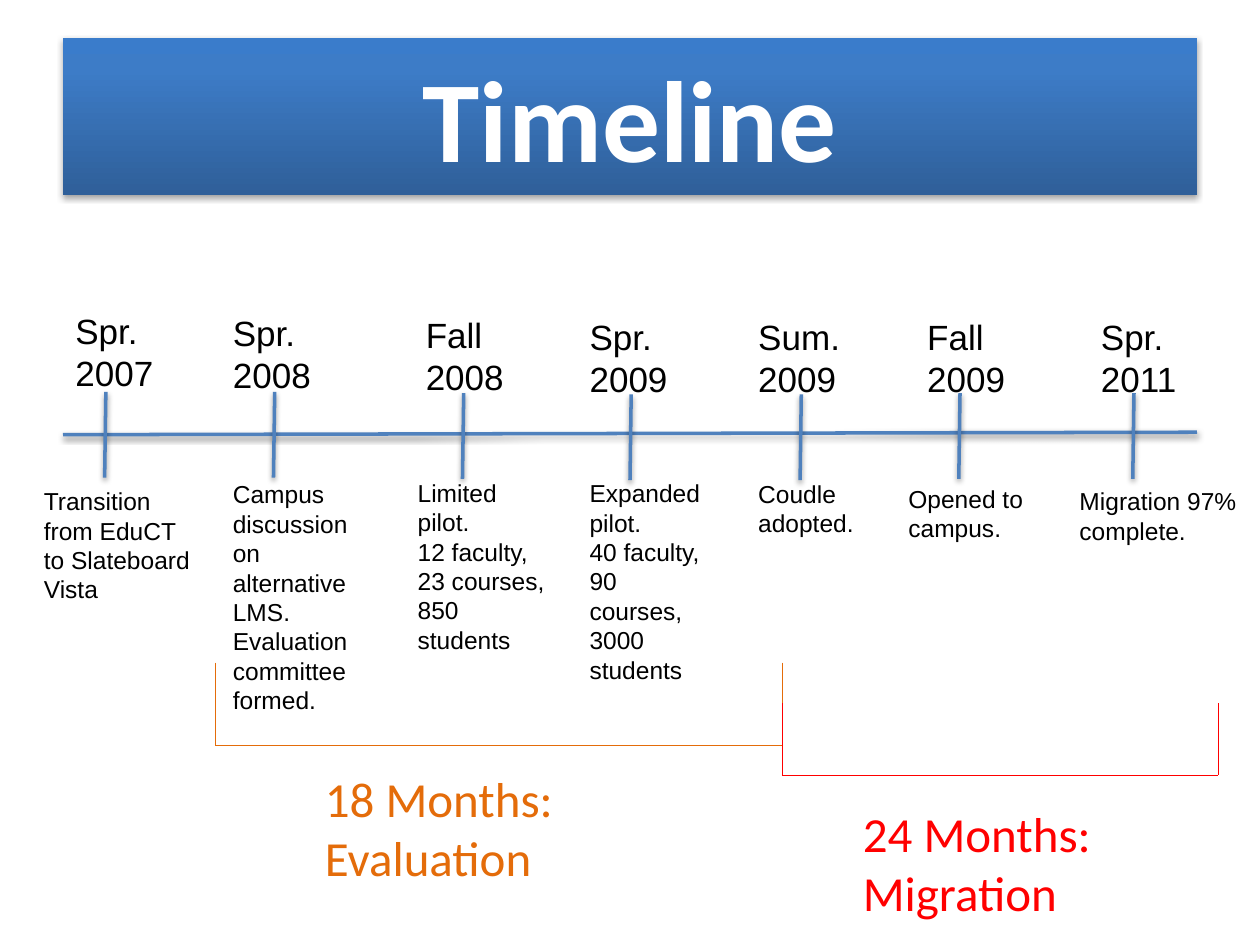
from dataclasses import dataclass

from lxml import etree
from pptx import Presentation
from pptx import util as u
from pptx.dml.color import RGBColor
from pptx.enum import shapes, text
from pptx.oxml import ns

Pt = u.Pt


@dataclass(frozen=True)
class Theme:
    black: str = "000000"
    white: str = "FFFFFF"
    axis: str = "4F81BD"
    evaluation: str = "E46C0A"
    migration: str = "FF0000"
    banner: tuple = ((0, "2F5F99"), (80, "3D7CC7"), (100, "3A7CCB"))
    heading_font: str = "Calibri"
    body_font: str = "Arial"
    title_size: int = 66
    phase_size: int = 28
    date_size: int = 20
    note_size: int = 14
    axis_width: float = 2
    bracket_width: float = 0.75


T = Theme()

# tick (x, top), date (left, top, width), date lines,
# note (left, top, width, height), note paragraphs
MILESTONES = [
    ((60.5, 223.9), (36, 173.5, 69.8), ("Spr.", "2007"),
     (18, 274.3, 105.1, 74.9), ("Transition from EduCT to Slateboard Vista",)),
    ((157, 223.9), (126, 174.7, 69.8), ("Spr.", "2008"),
     (126, 270.3, 91.4, 159.8),
     ("Campus discussion on alternative LMS. Evaluation committee formed.",)),
    ((265, 224.6), (236.2, 175.5, 85), ("Fall", "2008"),
     (231.6, 269.5, 90, 108.7),
     ("Limited pilot.", "12 faculty, 23 courses,", "850 students")),
    ((360.7, 225.4), (329.8, 176.6, 75.6), ("Spr.", "2009"),
     (329.8, 269.7, 83.5, 126),
     ("Expanded pilot.", "40 faculty,", "90 courses,", "3000 students")),
    ((457.9, 225.4), (426.2, 176.6, 75.6), ("Sum.", "2009"),
     (426.2, 270.1, 83.5, 41), ("Coudle adopted.",)),
    ((548.6, 224.6), (522.7, 176.6, 78.5), ("Fall", "2009"),
     (512, 272.9, 88.6, 41), ("Opened to campus.",)),
    ((648, 224.6), (622, 176.6, 68.4), ("Spr.", "2011"),
     (609.8, 274.3, 110.2, 41), ("Migration 97% complete.",)),
]


def rgb(value):
    return RGBColor.from_string(value)


def set_effects(sp, alpha=0, distance=0):
    """Replace inherited effects; a zero alpha means no shadow."""
    effects = etree.SubElement(sp._element.spPr, ns.qn("a:effectLst"))
    if alpha:
        shadow = etree.SubElement(
            effects, ns.qn("a:outerShdw"), blurRad=str(Pt(3.1)),
            dist=str(Pt(distance)), dir="5400000", rotWithShape="0")
        color = etree.SubElement(shadow, ns.qn("a:srgbClr"), val=T.black)
        etree.SubElement(color, ns.qn("a:alpha"), val=str(alpha * 1000))


def set_gradient(sp, stops):
    """Fill from bottom to top with (percent, colour) stops."""
    sp.fill.gradient()
    sp.fill.gradient_angle = 90
    stop_list = sp._element.spPr.find(".//" + ns.qn("a:gsLst"))
    for old in list(stop_list):
        stop_list.remove(old)
    for percent, color in stops:
        stop = etree.SubElement(stop_list, ns.qn("a:gs"), pos=str(percent * 1000))
        etree.SubElement(stop, ns.qn("a:srgbClr"), val=color)


def write(tf, paragraphs, font, size, color, bold=False, align=text.PP_ALIGN.LEFT):
    tf.word_wrap = True
    for i, words in enumerate(paragraphs):
        p = tf.paragraphs[0] if i == 0 else tf.add_paragraph()
        p.alignment = align
        r = p.add_run()
        r.text = words
        r.font.name = font
        r.font.size = Pt(size)
        r.font.bold = bold
        r.font.color.rgb = rgb(color)


def add_text(s, box, paragraphs, font, size, color):
    sp = s.shapes.add_textbox(*map(Pt, box))
    write(sp.text_frame, paragraphs, font, size, color)
    sp.text_frame.auto_size = text.MSO_AUTO_SIZE.SHAPE_TO_FIT_TEXT


def add_line(parent, start, end, color, width, shadow=0):
    line = parent.shapes.add_connector(
        shapes.MSO_CONNECTOR.STRAIGHT, *map(Pt, (*start, *end)))
    line.line.color.rgb = rgb(color)
    line.line.width = Pt(width)
    set_effects(line, shadow, 1.6)


def add_title(s, words):
    sp = s.shapes.add_shape(
        shapes.MSO_SHAPE.RECTANGLE, Pt(36), Pt(21.6), Pt(648), Pt(90))
    set_gradient(sp, T.banner)
    sp.line.fill.background()
    set_effects(sp, 35, 1.8)
    sp.text_frame.vertical_anchor = text.MSO_ANCHOR.MIDDLE
    write(sp.text_frame, [words], T.heading_font, T.title_size, T.white,
          bold=True, align=text.PP_ALIGN.CENTER)


def add_milestone(s, tick, date_box, date, note_box, note):
    x, top = tick
    add_line(s, tick, (x - 0.7, top + 49), T.axis, T.axis_width, shadow=38)
    add_text(s, (*date_box, 55.4), date, T.body_font, T.date_size, T.black)
    add_text(s, note_box, note, T.body_font, T.note_size, T.black)


def add_bracket(s, left, right, top, bottom, color):
    group = s.shapes.add_group_shape()
    add_line(group, (left, bottom), (right, bottom), color, T.bracket_width)
    for x in (left, right):
        add_line(group, (x, top), (x, bottom), color, T.bracket_width)


def main():
    prs = Presentation()
    prs.slide_width, prs.slide_height = Pt(720), Pt(540)
    s = prs.slides.add_slide(prs.slide_layouts[6])

    add_title(s, "Timeline")
    add_line(s, (36, 248.4), (684, 247), T.axis, T.axis_width, shadow=38)
    for milestone in MILESTONES:
        add_milestone(s, *milestone)

    add_bracket(s, 123.1, 447.1, 378.7, 426, T.evaluation)
    add_text(s, (178.6, 435.6, 212.4, 74.9), ["18 Months: Evaluation"],
             T.heading_font, T.phase_size, T.evaluation)
    add_bracket(s, 447.1, 696.2, 402, 443, T.migration)
    add_text(s, (486, 455.8, 200.9, 74.9), ["24 Months:", "Migration"],
             T.heading_font, T.phase_size, T.migration)
    prs.save("out.pptx")


if __name__ == "__main__":
    main()
